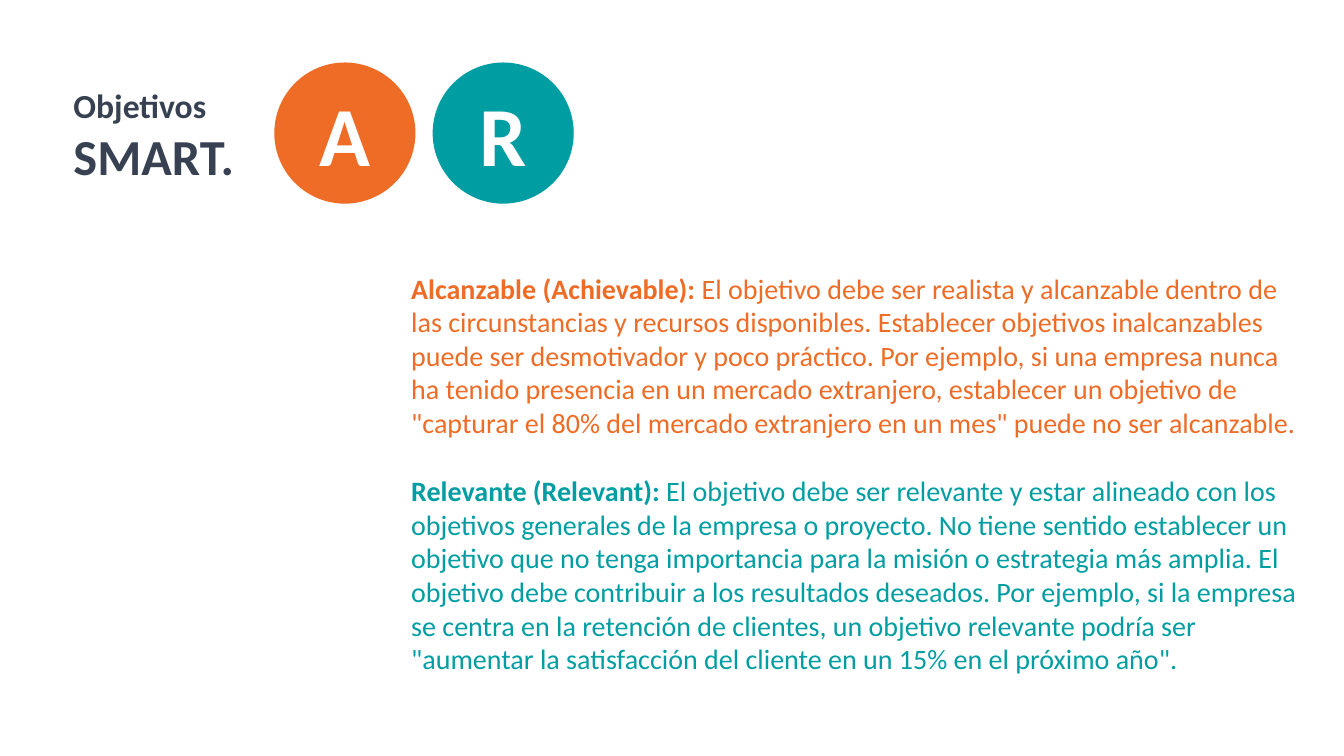
import pptx
import pptx.dml.color
import pptx.enum.shapes
import pptx.enum.text
import pptx.util

ORANGE = pptx.dml.color.RGBColor(0xEE, 0x6C, 0x26)
TEAL = pptx.dml.color.RGBColor(0x00, 0x9E, 0xA2)
SLATE = pptx.dml.color.RGBColor(0x37, 0x41, 0x51)
WHITE = pptx.dml.color.RGBColor(0xFF, 0xFF, 0xFF)

CIRCLE_LEFT, CIRCLE_TOP = 20.41, 8.27
CIRCLE_WIDTH, CIRCLE_HEIGHT = 10.5, 18.67
CIRCLE_STEP = 11.78
LETTER_TOP, LETTER_WIDTH, LETTER_HEIGHT = 10.27, 8.55, 14.8
BODY_LEFT, BODY_WIDTH = 29.86, 67.89

GOALS = [
    ("A", ORANGE, 35.2, 23.73, "Alcanzable (Achievable): ",
     "El objetivo debe ser realista y alcanzable dentro de las circunstancias y recursos "
     "disponibles. Establecer objetivos inalcanzables puede ser desmotivador y poco práctico. "
     "Por ejemplo, si una empresa nunca ha tenido presencia en un mercado extranjero, "
     'establecer un objetivo de "capturar el 80% del mercado extranjero en un mes" '
     "puede no ser alcanzable."),
    ("R", TEAL, 62, 28.27, "Relevante (Relevant): ",
     "El objetivo debe ser relevante y estar alineado con los objetivos generales de la "
     "empresa o proyecto. No tiene sentido establecer un objetivo que no tenga importancia "
     "para la misión o estrategia más amplia. El objetivo debe contribuir a los resultados "
     "deseados. Por ejemplo, si la empresa se centra en la retención de clientes, un objetivo "
     'relevante podría ser "aumentar la satisfacción del cliente en un 15% en el próximo año".'),
]


class SlideWriter:
    font_name = "Calibri"

    def __init__(self, deck):
        self.page = deck.slides.add_slide(deck.slide_layouts[6])
        self.column = deck.slide_width / 100
        self.row = deck.slide_height / 100

    def place(self, left, top, width, height):
        return (round(left * self.column), round(top * self.row),
                round(width * self.column), round(height * self.row))

    def circle(self, area, color):
        shape = self.page.shapes.add_shape(
            pptx.enum.shapes.MSO_SHAPE.OVAL, *self.place(*area))
        shape.shadow.inherit = False
        shape.fill.solid()
        shape.fill.fore_color.rgb = color
        shape.line.fill.background()

    def text(self, area, lines, color, align=pptx.enum.text.PP_ALIGN.LEFT):
        frame = self.page.shapes.add_textbox(*self.place(*area)).text_frame
        frame.word_wrap = True
        frame.auto_size = pptx.enum.text.MSO_AUTO_SIZE.SHAPE_TO_FIT_TEXT
        for index, spans in enumerate(lines):
            para = frame.add_paragraph() if index else frame.paragraphs[0]
            para.alignment = align
            for words, size, bold in spans:
                span = para.add_run()
                span.text = words
                formats = {"name": self.font_name, "size": pptx.util.Pt(size), "bold": bold}
                for key, value in formats.items():
                    setattr(span.font, key, value)
                span.font.color.rgb = color


def main():
    deck = pptx.Presentation()
    deck.slide_width = pptx.util.Inches(13.33)
    deck.slide_height = pptx.util.Inches(7.5)
    writer = SlideWriter(deck)

    writer.text((4.73, 10.53, 76.74, 14.8),
                [[("Objetivos", 24, True)], [("SMART.", 36, True)]], SLATE)
    for index, (letter, color, top, height, heading, body) in enumerate(GOALS):
        left = CIRCLE_LEFT + index * CIRCLE_STEP
        letter_left = left + (CIRCLE_WIDTH - LETTER_WIDTH) / 2
        writer.circle((left, CIRCLE_TOP, CIRCLE_WIDTH, CIRCLE_HEIGHT), color)
        writer.text((letter_left, LETTER_TOP, LETTER_WIDTH, LETTER_HEIGHT),
                    [[(letter, 60, True)]], WHITE, pptx.enum.text.PP_ALIGN.CENTER)
        writer.text((BODY_LEFT, top, BODY_WIDTH, height),
                    [[(heading, 20, True), (body, 20, False)]], color)

    deck.save("out.pptx")


if __name__ == "__main__":
    main()
